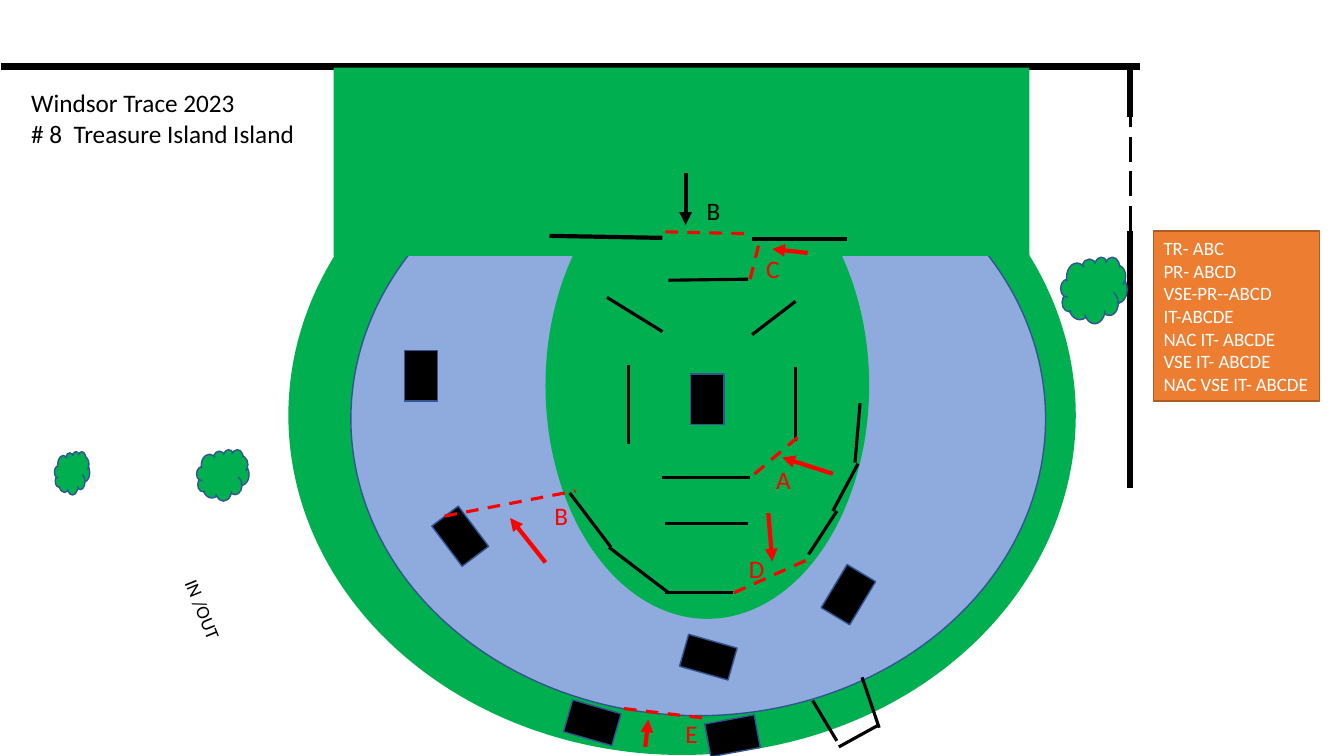
from lxml import etree
from pptx import Presentation
from pptx.dml.color import RGBColor
from pptx.enum.dml import MSO_LINE
from pptx.enum.shapes import MSO_CONNECTOR, MSO_SHAPE
from pptx.enum.text import MSO_ANCHOR, MSO_AUTO_SIZE, PP_ALIGN
from pptx.oxml.ns import qn
from pptx.util import Inches, Pt

COLS, ROWS = 1333, 750
CELL = Inches(0.01)
GREEN, BLUE, NAVY = "00B050", "8FAADC", "325491"
BLACK, RED, WHITE = "000000", "FF0000", "FFFFFF"
ORANGE, BROWN = "ED7D31", "AF5C24"

TITLE = ["Windsor Trace 2023", "# 8  Treasure Island Island"]
DIVISIONS = ["TR- ABC", "PR- ABCD", "VSE-PR--ABCD", "IT-ABCDE",
             "NAC IT- ABCDE", "VSE IT- ABCDE", "NAC VSE IT- ABCDE"]
BLOCKS = [(440, 507, 323), (401, 348, 0), (825, 565, 31), (571, 692, 286.1),
          (710, 705, 79.4), (686, 627, 105.9), (685, 371, 0)]
CLOUDS = [(1052, 255, 66, 66), (195, 446, 52, 51), (54, 448, 35, 43)]
WALLS = [(1, 66, 1131, 66), (1121, 484, 1121, 229), (1121, 116, 1121, 66)]
PANELS = [(802, 550, 830, 507), (604, 543, 663, 588), (660, 588, 727, 588),
          (657, 329, 602, 295), (660, 519, 742, 519), (789, 438, 789, 364),
          (623, 362, 623, 440), (657, 474, 744, 474), (663, 278, 742, 277),
          (789, 299, 746, 332), (848, 459, 853, 400), (565, 489, 606, 543),
          (826, 507, 851, 460), (872, 722, 855, 672), (872, 719, 832, 741),
          (830, 735, 806, 695)]
RAILS = [(545, 234, 657, 236), (746, 237, 840, 237)]
GATES = [(441, 512, 571, 487), (791, 434, 744, 474), (660, 230, 747, 232),
         (619, 703, 704, 713), (728, 588, 806, 553), (744, 277, 754, 237)]
ARROWS = [(801, 251, 766, 247), (762, 509, 766, 557), (826, 470, 776, 454),
          (640, 741, 643, 714), (541, 558, 506, 514)]
LETTERS = [("A", 760, 456, RED), ("B", 540, 491, RED), ("C", 750, 246, RED),
           ("D", 733, 544, RED), ("E", 670, 708, RED), ("B", 691, 189, BLACK)]


def rgb(code):
    """Turn a hex string into a colour."""
    return RGBColor.from_string(code)


def place(sp, left, top, width, height):
    """Move a shape to a cell of the grid and size it in cells."""
    sp.left, sp.top = left * CELL, top * CELL
    sp.width, sp.height = width * CELL, height * CELL


def paint(sp, fill, outline=None):
    """Fill a shape and give it a thin outline or none."""
    sp.fill.solid()
    sp.fill.fore_color.rgb = rgb(fill)
    if outline:
        sp.line.color.rgb = rgb(outline)
        sp.line.width = Pt(1)
    else:
        sp.line.fill.background()


def add_area(s, kind, box, fill, outline=None, turn=0):
    """Add a filled preset shape."""
    sp = s.shapes.add_shape(kind, *(n * CELL for n in box))
    sp.shadow.inherit = False
    sp.rotation = turn
    paint(sp, fill, outline)


def add_line(s, ends, colour, width, dash=None, arrow=False):
    """Add a straight connector, dashed or with an arrowhead if asked."""
    cn = s.shapes.add_connector(MSO_CONNECTOR.STRAIGHT, *(n * CELL for n in ends))
    cn.line.color.rgb = rgb(colour)
    cn.line.width = Pt(width)
    if dash:
        cn.line.dash_style = dash
    if arrow:
        etree.SubElement(cn.line._get_or_add_ln(), qn("a:tailEnd"), type="triangle")
    etree.SubElement(cn._element.spPr, qn("a:effectLst"))


def write(sp, lines, size, colour, anchor=MSO_ANCHOR.TOP):
    """Write plain left-aligned lines into a shape."""
    tf = sp.text_frame
    tf.text = "\n".join(lines)
    tf.word_wrap = True
    tf.auto_size = MSO_AUTO_SIZE.NONE
    tf.vertical_anchor = anchor
    for p in tf.paragraphs:
        p.alignment = PP_ALIGN.LEFT
        p.space_before = Pt(0)
        p.font.name = "Calibri"
        p.font.size = Pt(size)
        p.font.color.rgb = rgb(colour)


def add_label(s, text, box, size, colour, turn=0):
    """Add a one-line text box."""
    sp = s.shapes.add_textbox(*(n * CELL for n in box))
    sp.rotation = turn
    write(sp, [text], size, colour)


def fill_placeholders(s):
    """Set the title and the list of divisions."""
    title, body = s.shapes.title, s.placeholders[1]
    place(title, 21, 82, 284, 101)
    write(title, TITLE, 18, BLACK)
    place(body, 1144, 229, 165, 169)
    paint(body, ORANGE, BROWN)
    write(body, DIVISIONS, 13.5, WHITE, MSO_ANCHOR.MIDDLE)
    for p in body.text_frame.paragraphs:
        pPr = p._p.get_or_add_pPr()
        pPr.set("marL", "0")
        pPr.set("indent", "0")
        pPr.insert_element_before(pPr.makeelement(qn("a:buNone")),
                                  "a:tabLst", "a:defRPr", "a:extLst")


def draw_ground(s):
    """Draw the island, the water, the arena walls and the bushes."""
    add_area(s, MSO_SHAPE.OVAL, (286, 75, 781, 674), GREEN)
    add_area(s, MSO_SHAPE.OVAL, (348, 121, 689, 589), BLUE, NAVY)
    add_area(s, MSO_SHAPE.OVAL, (470, 222, 463, 321), GREEN, turn=90)
    for ends in WALLS:
        add_line(s, ends, BLACK, 4.5)
    add_line(s, (1121, 229, 1121, 116), BLACK, 2.25, MSO_LINE.LONG_DASH)
    for box in CLOUDS:
        add_area(s, MSO_SHAPE.CLOUD, box, GREEN, NAVY)
    add_area(s, MSO_SHAPE.RECTANGLE, (331, 67, 690, 187), GREEN)


def draw_obstacles(s):
    """Draw the blocks, panels, gates and direction arrows."""
    for left, top, turn in BLOCKS:
        add_area(s, MSO_SHAPE.RECTANGLE, (left, top, 33, 50), BLACK, NAVY, turn)
    for ends in PANELS:
        add_line(s, ends, BLACK, 2.25)
    for ends in RAILS:
        add_line(s, ends, BLACK, 3)
    for ends in GATES:
        add_line(s, ends, RED, 2.25, MSO_LINE.DASH)
    for ends in ARROWS:
        add_line(s, ends, RED, 3, arrow=True)
    add_line(s, (680, 172, 680, 223), BLACK, 3, arrow=True)


def main():
    """Build the course map and save it."""
    prs = Presentation()
    prs.slide_width, prs.slide_height = COLS * CELL, ROWS * CELL
    s = prs.slides.add_slide(prs.slide_layouts[1])
    fill_placeholders(s)
    draw_ground(s)
    draw_obstacles(s)
    for letter, left, top, colour in LETTERS:
        add_label(s, letter, (left, top, 34, 40), 18, colour)
    add_label(s, "IN /OUT", (160, 589, 83, 33), 13.5, BLACK, 67.8)
    prs.save("out.pptx")


if __name__ == "__main__":
    main()
